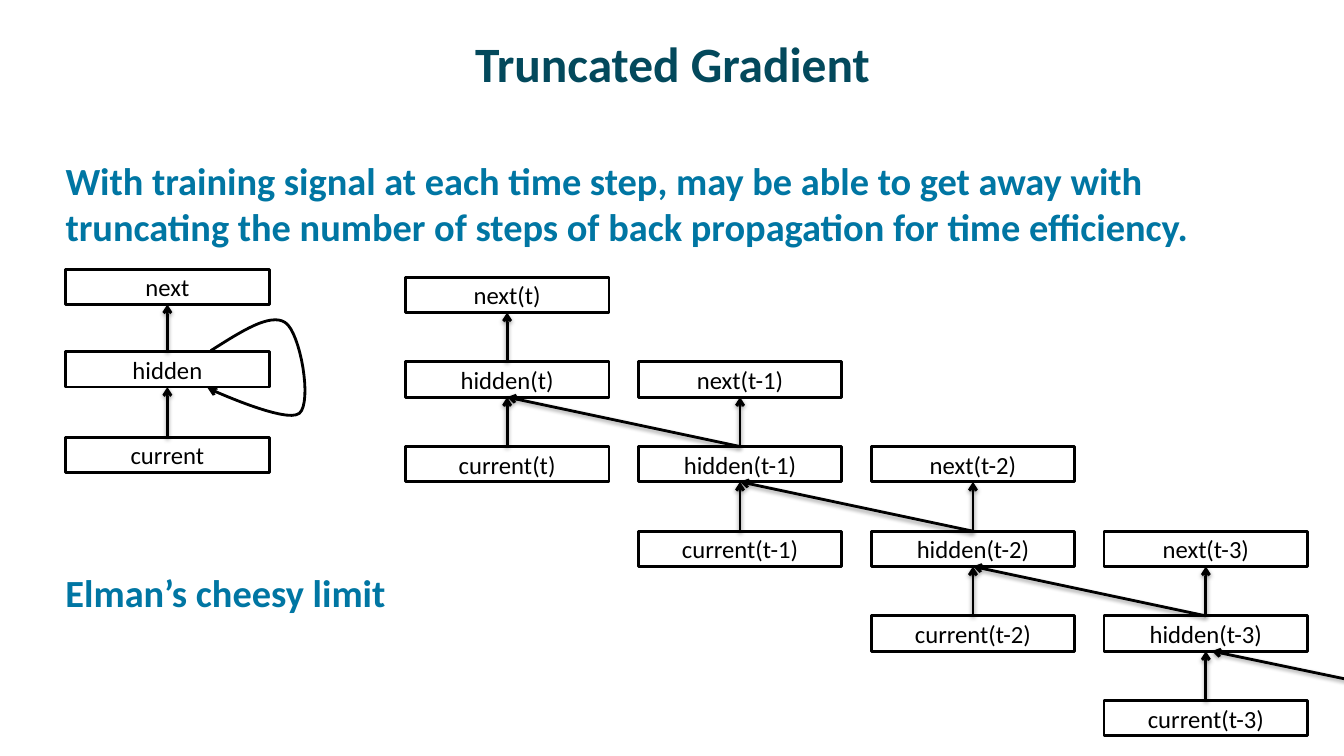
from dataclasses import dataclass

from lxml import etree
from pptx import Presentation
from pptx.dml.color import RGBColor
from pptx.enum.shapes import MSO_CONNECTOR, MSO_SHAPE
from pptx.enum.text import MSO_ANCHOR, PP_ALIGN
from pptx.oxml import parse_xml
from pptx.oxml.ns import nsdecls, qn
from pptx.util import Inches, Pt

RECT = MSO_SHAPE.RECTANGLE
STRAIGHT = MSO_CONNECTOR.STRAIGHT
CENTER, LEFT = PP_ALIGN.CENTER, PP_ALIGN.LEFT
TOP, MIDDLE = MSO_ANCHOR.TOP, MSO_ANCHOR.MIDDLE
TOP_SIDE, BOTTOM_SIDE = 0, 2
BOX_W, BOX_H = 2.02, 0.35


@dataclass(frozen=True)
class Theme:
    font: str = "Calibri"
    title: RGBColor = RGBColor(0x03, 0x49, 0x5C)
    body: RGBColor = RGBColor(0x00, 0x76, 0xA3)
    ink: RGBColor = RGBColor(0, 0, 0)
    paper: RGBColor = RGBColor(255, 255, 255)
    title_size: float = 35.3
    body_size: float = 27.4
    label_size: float = 17.6
    stroke: float = 2


THEME = Theme()


def write(s, text, size, color, bold, align, anchor):
    tf = s.text_frame
    frame = {"word_wrap": True, "vertical_anchor": anchor,
             "margin_left": Inches(0.11), "margin_right": Inches(0.11),
             "margin_top": Inches(0.06), "margin_bottom": Inches(0.06)}
    for name, value in frame.items():
        setattr(tf, name, value)
    p = tf.paragraphs[0]
    p.alignment = align
    r = p.add_run()
    r.text = text
    font = {"name": THEME.font, "size": Pt(size), "bold": bold}
    for name, value in font.items():
        setattr(r.font, name, value)
    r.font.color.rgb = color


def stroke(s, arrow=False):
    s.line.color.rgb = THEME.ink
    s.line.width = Pt(THEME.stroke)
    if arrow:
        ln = s.element.spPr.find(qn("a:ln"))
        etree.SubElement(ln, qn("a:tailEnd"), type="arrow")


def add_box(shapes, label, left, top):
    s = shapes.add_shape(RECT, Inches(left), Inches(top), Inches(BOX_W), Inches(BOX_H))
    s.shadow.inherit = False
    s.fill.solid()
    s.fill.fore_color.rgb = THEME.paper
    stroke(s)
    write(s, label, THEME.label_size, THEME.ink, False, CENTER, MIDDLE)
    return s


def add_arrow(shapes, x1, y1, x2, y2):
    """Add an arrow with a soft shadow below it."""
    s = shapes.add_connector(STRAIGHT, x1, y1, x2, y2)
    stroke(s, arrow=True)
    s.element.spPr.append(parse_xml(
        f'<a:effectLst {nsdecls("a")}><a:outerShdw blurRad="{Pt(3.1)}" dist="{Pt(1.6)}" '
        'dir="5400000" rotWithShape="0"><a:srgbClr val="000000"><a:alpha val="38000"/>'
        '</a:srgbClr></a:outerShdw></a:effectLst>'))
    return s


def link_up(shapes, lower, upper):
    """Join the top of the lower box to the bottom of the upper one."""
    s = add_arrow(shapes, lower.left, lower.top, upper.left, upper.top)
    s.begin_connect(lower, TOP_SIDE)
    s.end_connect(upper, BOTTOM_SIDE)


def add_stack(shapes, left, tops, suffix=""):
    """Add next, hidden and current boxes with their arrows; return the hidden box."""
    upper, hidden, lower = [add_box(shapes, name + suffix, left, top)
                            for name, top in zip(("next", "hidden", "current"), tops)]
    link_up(shapes, lower, hidden)
    link_up(shapes, hidden, upper)
    return hidden


def bezier(p0, p1, p2, p3, steps=16):
    """Return points along a cubic curve, without its start."""
    points = []
    for i in range(1, steps + 1):
        t = i / steps
        weights = ((1 - t) ** 3, 3 * t * (1 - t) ** 2, 3 * t * t * (1 - t), t ** 3)
        points.append(tuple(sum(w * p[axis] for w, p in zip(weights, (p0, p1, p2, p3)))
                            for axis in (0, 1)))
    return points


def add_recurrent_net(slide, left, top):
    shapes = slide.shapes.add_group_shape().shapes
    add_stack(shapes, left, (top, top + 0.82, top + 1.67))
    offsets = ((1.44, 0.81), (1.74, 0.62), (2.03, 0.43), (2.18, 0.53), (2.33, 0.63),
               (2.45, 1.32), (2.32, 1.43), (2.19, 1.54), (1.41, 1.18), (1.41, 1.18))
    knots = [(Inches(left + x), Inches(top + y)) for x, y in offsets]
    loop = shapes.build_freeform(*knots[0])
    for i in range(0, len(knots) - 1, 3):
        loop.add_line_segments(bezier(*knots[i:i + 4]), close=False)
    s = loop.convert_to_shape()
    s.shadow.inherit = False
    s.fill.background()
    stroke(s, arrow=True)


def add_unrolled_net(slide, left, top, steps=4, dx=2.31, dy=0.84):
    shapes = slide.shapes
    later = None
    for i in range(steps):
        suffix = f"(t-{i})" if i else "(t)"
        tops = [top + (i + row) * dy for row in range(3)]
        hidden = add_stack(shapes, left + i * dx, tops, suffix)
        if later is not None:
            link_up(shapes, hidden, later)
        later = hidden
    x = later.left + Inches(1.07)
    y = later.top + later.height
    add_arrow(shapes, x + Inches(2.3), y + Inches(0.48), x, y)


def add_title(slide, left, top, width, height):
    s = slide.shapes.title
    s.left, s.top, s.width, s.height = map(Inches, (left, top, width, height))
    write(s, "Truncated Gradient", THEME.title_size, THEME.title, True, CENTER, MIDDLE)


def add_statement(slide, text, left, top, width, height):
    s = slide.shapes.add_textbox(*map(Inches, (left, top, width, height)))
    write(s, text, THEME.body_size, THEME.body, True, LEFT, TOP)


def main():
    prs = Presentation()
    prs.slide_width, prs.slide_height = Inches(13.33), Inches(7.5)
    slide = prs.slides.add_slide(prs.slide_layouts[5])
    add_title(slide, 0.67, 0.16, 12, 0.92)
    add_statement(slide, "With training signal at each time step, may be able to get away "
                  "with truncating the number of steps of back propagation for time "
                  "efficiency.", 0.54, 1.5, 12.12, 1.05)
    add_statement(slide, "Elman’s cheesy limit", 0.54, 5.59, 4, 0.6)
    add_unrolled_net(slide, 4.02, 2.75)
    add_recurrent_net(slide, 0.65, 2.67)
    prs.save("out.pptx")


if __name__ == "__main__":
    main()
